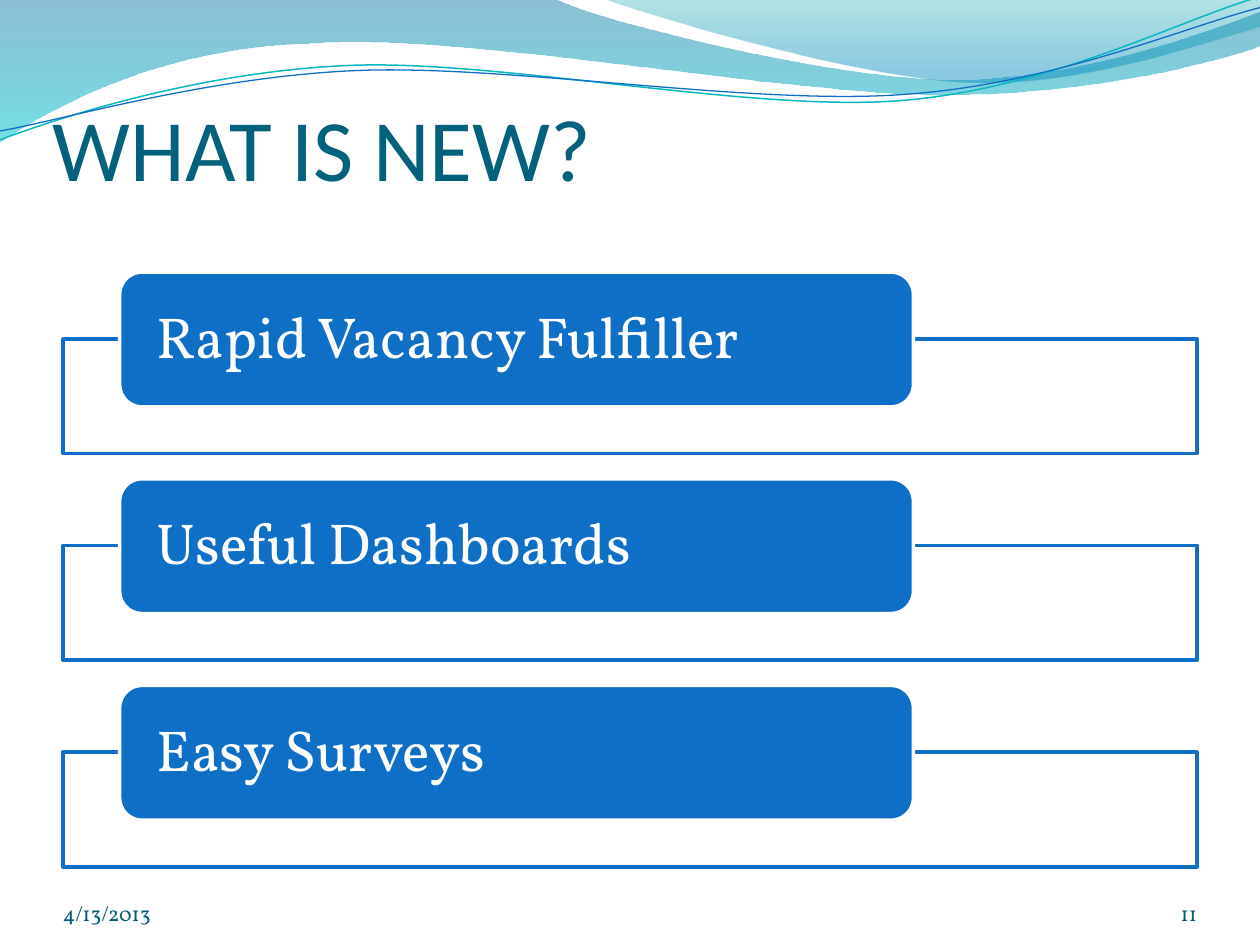
from math import cos, radians, sin

from lxml import etree
from pptx import Presentation
from pptx.dml.color import RGBColor
from pptx.enum.shapes import MSO_SHAPE
from pptx.enum.text import MSO_ANCHOR, MSO_AUTO_SIZE, PP_ALIGN
from pptx.oxml.ns import qn
from pptx.util import Cm, Pt

LEFT, RIGHT = PP_ALIGN.LEFT, PP_ALIGN.RIGHT
MIDDLE, BOTTOM = MSO_ANCHOR.MIDDLE, MSO_ANCHOR.BOTTOM
RECTANGLE, ROUNDED = MSO_SHAPE.RECTANGLE, MSO_SHAPE.ROUNDED_RECTANGLE

# Content
TITLE = "WHAT IS NEW?"
FEATURES = ["Rapid Vacancy Fulfiller", "Useful Dashboards", "Easy Surveys"]
DATE, PAGE = "4/13/2013", "11"

THEME = {
    "blue": "0F6FC6", "white": "FFFFFF", "teal": "0AB8BF",
    "title": {"name": "Calibri", "size": Pt(50), "color": "04617B"},
    "feature": {"name": "Vollkorn", "size": Pt(33), "color": "FFFFFF"},
    "footer": {"name": "Vollkorn", "size": Pt(12), "color": "045D75"},
}

# Waves, in inches: two numbers are a corner, six are a Bezier curve.
# Gradient stops are (position, colour, opacity percent).
BANDS = [
    {"box": (-0.01, -0.01, 10.02, 1.14), "start": (0, 0),
     "steps": [(4.4, -0.01), (4.76, 0.17, 6.64, 0.63, 7.58, 0.63),
               (8.53, 0.63, 9.58, 0.26, 10, 0.09), (10.01, 0.36),
               (9.83, 0.44, 8.7, 0.76, 7.46, 0.75),
               (6.22, 0.75, 3.82, 0.28, 2.57, 0.34),
               (1.29, 0.36, 0.46, 0.83, -0.01, 1.13), (0, 0)],
     "stops": [(0, "0074A1", 45), (1, "00C6CF", 55)]},
    {"box": (4.79, -0.01, 5.21, 0.7), "start": (4.79, -0.01),
     "steps": [(5.09, 0.11, 6.82, 0.62, 7.69, 0.65),
               (8.56, 0.69, 9.61, 0.32, 10, 0.21), (10, 0), (4.79, -0.01)],
     "stops": [(0, "00A1A9", 30), (0.8, "008BBF", 45)]},
]
STRANDS = [
    {"box": (-0.02, 0.22, 10.02, 0.71), "start": (0, 1.11),
     "color": THEME["teal"], "width": 0.85,
     "steps": [(0.48, 0.93, 1.58, 0.57, 2.77, 0.52),
               (3.95, 0.47, 5.93, 0.89, 7.13, 0.8),
               (8.33, 0.71, 9.38, 0.15, 9.98, -0.02)]},
    {"box": (-0.02, 0.3, 10.03, 0.58), "start": (0, 1.04),
     "color": THEME["blue"], "width": 0.75,
     "steps": [(0.47, 0.96, 1.64, 0.61, 2.83, 0.56),
               (4.03, 0.51, 5.97, 0.84, 7.17, 0.75),
               (8.36, 0.67, 9.41, 0.21, 10, 0.06)]},
]
STRAND_TILT = -2.7

# Layout, in inches
MARGIN, CONTENT_WIDTH = 0.5, 9
FIRST_TOP, ROW_PITCH = 2.16, 1.64
LABEL_INDENT, LABEL_WIDTH, LABEL_HEIGHT = 0.45, 6.3, 1.07
FRAME_DROP, FRAME_HEIGHT = 0.53, 0.91
FOOTER_TOP, FOOTER_HEIGHT = 6.95, 0.4


def inches(value):
    return Cm(value * 2.54)


def rgb(color):
    return RGBColor.from_string(color)


def place(shape, box):
    shape.left, shape.top, shape.width, shape.height = map(inches, box)


def set_opacity(shape, percents):
    colors = shape.fill._xPr.iter(qn("a:srgbClr"))
    for color, percent in zip(colors, percents):
        etree.SubElement(color, qn("a:alpha"), val=str(percent * 1000))


def set_line(shape, color, width):
    shape.line.color.rgb = rgb(color)
    shape.line.width = Pt(width)


def write(shape, text, style, anchor, align=LEFT, insets=(0, 0, 0, 0)):
    frame = shape.text_frame
    left, top, right, bottom = map(inches, insets)
    settings = {"word_wrap": True, "auto_size": MSO_AUTO_SIZE.NONE,
                "vertical_anchor": anchor, "margin_left": left,
                "margin_top": top, "margin_right": right,
                "margin_bottom": bottom}
    for name, value in settings.items():
        setattr(frame, name, value)
    paragraph = frame.paragraphs[0]
    paragraph.alignment = align
    run = paragraph.add_run()
    run.text = text
    run.font.name, run.font.size = style["name"], style["size"]
    run.font.color.rgb = rgb(style["color"])
    return paragraph


def add_box(slide, kind, left, top, width, height, fill, line):
    shape = slide.shapes.add_shape(kind, *map(inches, (left, top, width, height)))
    shape.shadow.inherit = False
    shape.fill.solid()
    shape.fill.fore_color.rgb = rgb(fill)
    set_line(shape, line, 2)
    return shape


def add_wave(slide, wave, tilt=0):
    """Draw a curved outline; its points are given as seen after the tilt."""
    left, top, width, height = wave["box"]
    turn = radians(-tilt)

    def local(x, y):
        across, down = x - left - width / 2, y - top - height / 2
        return (inches(across * cos(turn) - down * sin(turn) + width / 2),
                inches(across * sin(turn) + down * cos(turn) + height / 2))

    builder = slide.shapes.build_freeform(*local(*wave["start"]))
    builder.add_line_segments([local(*step[-2:]) for step in wave["steps"]], close=False)
    shape = builder.convert_to_shape()
    place(shape, wave["box"])
    shape.rotation = tilt
    shape.shadow.inherit = False

    # Rewrite the outline with true curves
    outline = next(shape._element.iter(qn("a:path")))
    outline.set("w", str(inches(width)))
    outline.set("h", str(inches(height)))
    for command in list(outline):
        outline.remove(command)
    for index, step in enumerate([wave["start"]] + wave["steps"]):
        tag = "a:moveTo" if index == 0 else "a:lnTo" if len(step) == 2 else "a:cubicBezTo"
        command = etree.SubElement(outline, qn(tag))
        for x, y in zip(step[::2], step[1::2]):
            across, down = local(x, y)
            etree.SubElement(command, qn("a:pt"), x=str(across), y=str(down))
    return shape


def add_waves(slide):
    for band in BANDS:
        shape = add_wave(slide, band)
        shape.line.fill.background()
        shape.fill.gradient()
        shape.fill.gradient_angle = 270
        for stop, (position, color, _) in zip(shape.fill.gradient_stops, band["stops"]):
            stop.position = position
            stop.color.rgb = rgb(color)
        set_opacity(shape, [opacity for _, _, opacity in band["stops"]])
    for strand in STRANDS:
        shape = add_wave(slide, strand, STRAND_TILT)
        shape.fill.background()
        set_line(shape, strand["color"], strand["width"])


def add_feature(slide, index, text):
    top = FIRST_TOP + index * ROW_PITCH
    frame = add_box(slide, RECTANGLE, MARGIN, top + FRAME_DROP, CONTENT_WIDTH,
                    FRAME_HEIGHT, THEME["white"], THEME["blue"])
    set_opacity(frame, [90])
    label = add_box(slide, ROUNDED, MARGIN + LABEL_INDENT, top, LABEL_WIDTH,
                    LABEL_HEIGHT, THEME["blue"], THEME["white"])
    paragraph = write(label, text, THEME["feature"], MIDDLE,
                      insets=(0.24, 0, 0.24, 0))
    paragraph.line_spacing = 0.9


def add_footer(slide, text, left, width, align):
    box = slide.shapes.add_textbox(
        *map(inches, (left, FOOTER_TOP, width, FOOTER_HEIGHT)))
    write(box, text, THEME["footer"], BOTTOM, align)


def main():
    presentation = Presentation()
    presentation.slide_width, presentation.slide_height = inches(10), inches(7.5)
    slide = presentation.slides.add_slide(presentation.slide_layouts[5])

    # Background waves
    add_waves(slide)

    # Title
    title = slide.shapes.title
    place(title, (0.42, 0.33, 9, 1.25))
    write(title, TITLE, THEME["title"], BOTTOM, insets=(0, 0.05, 0, 0))

    # Feature rows
    for index, text in enumerate(FEATURES):
        add_feature(slide, index, text)

    # Date and page number
    add_footer(slide, DATE, MARGIN, 2.33, LEFT)
    add_footer(slide, PAGE, MARGIN + CONTENT_WIDTH - 0.83, 0.83, RIGHT)

    presentation.save("out.pptx")


if __name__ == "__main__":
    main()
